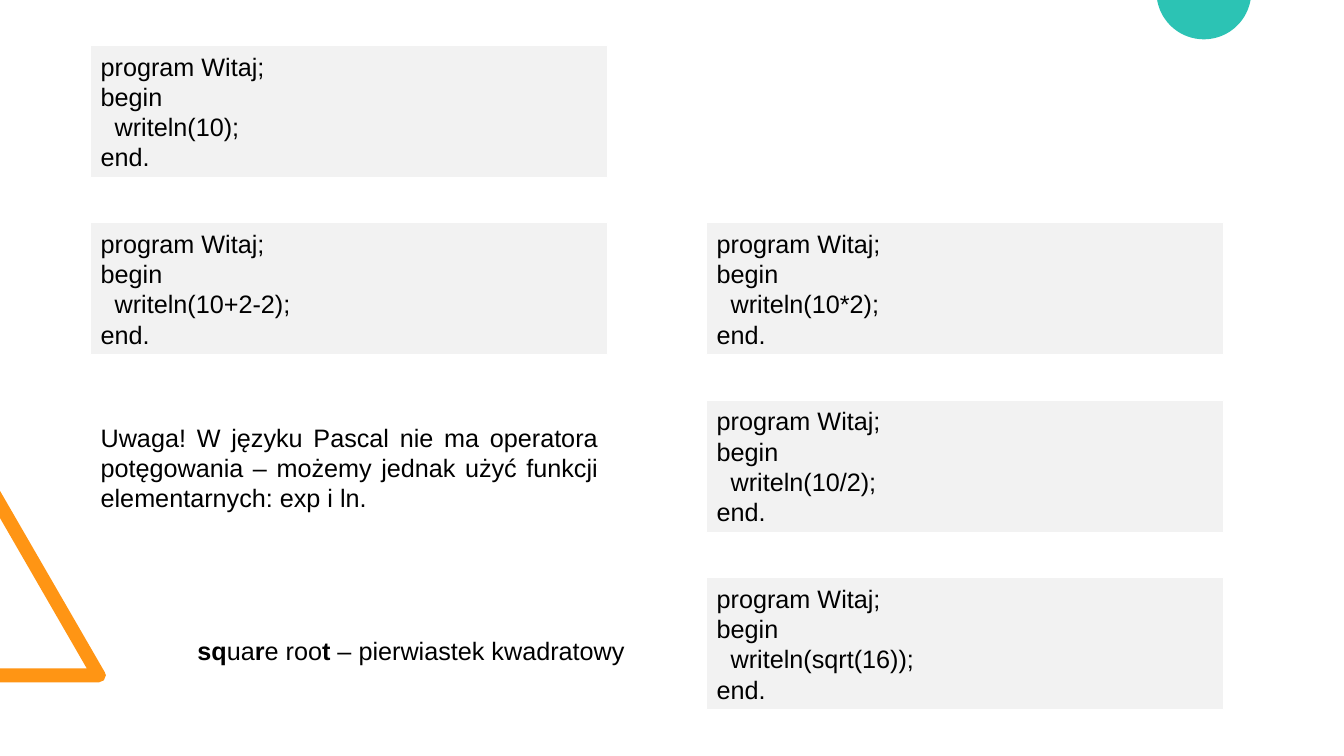
import math

import pptx
import pptx.dml.color
import pptx.enum.shapes
import pptx.enum.text
import pptx.util

Inches = pptx.util.Inches
COLORS = {
    "orange": "FF9514",
    "teal": "2CC3B4",
    "panel": "F2F2F2",
    "white": "FFFFFF",
    "black": "000000",
}


def color(name):
    return pptx.dml.color.RGBColor.from_string(COLORS[name])


def style_text(text_frame):
    text_frame.word_wrap = True
    text_frame.auto_size = pptx.enum.text.MSO_AUTO_SIZE.SHAPE_TO_FIT_TEXT
    for paragraph in text_frame.paragraphs:
        for run in paragraph.runs:
            run.font.name = "Arial"
            run.font.size = pptx.util.Pt(18)
            run.font.color.rgb = color("black")


presentation = pptx.Presentation()
presentation.slide_width = Inches(13.33)
presentation.slide_height = Inches(7.5)
slide = presentation.slides.add_slide(presentation.slide_layouts[6])

# Decorations cut off by the slide edges: a triangle and a circle
triangle = [(0, 6.77), (0, 6.63), (0.86, 6.63), (0, 5.14), (0, 4.87),
            (1.04, 6.67), (1.05, 6.7), (1.03, 6.75), (0.98, 6.77)]
center_x, center_y, radius = 11.94, -0.08, 0.47
edge_angle = math.asin(-center_y / radius)
steps = 48
circle = []
for step in range(steps + 1):
    angle = edge_angle + (math.pi - 2 * edge_angle) * step / steps
    circle.append((center_x + radius * math.cos(angle),
                   center_y + radius * math.sin(angle)))

for outline, fill in [(triangle, "orange"), (circle, "teal")]:
    points = [(Inches(x), Inches(y)) for x, y in outline]
    builder = slide.shapes.build_freeform(*points[0])
    builder.add_line_segments(points[1:], close=True)
    shape = builder.convert_to_shape()
    shape.shadow.inherit = False
    shape.fill.solid()
    shape.fill.fore_color.rgb = color(fill)
    shape.line.fill.background()

# Code panels on a grid of two columns and four rows
panels = [
    (0, 0, "10"),
    (0, 1, "10+2-2"),
    (1, 1, "10*2"),
    (1, 2, "10/2"),
    (1, 3, "sqrt(16)"),
]
for column, row, expression in panels:
    panel = slide.shapes.add_shape(
        pptx.enum.shapes.MSO_SHAPE.RECTANGLE,
        Inches(0.9 + 6.11 * column), Inches(0.45 + 1.76 * row),
        Inches(5.13), Inches(1.31))
    panel.shadow.inherit = False
    panel.fill.solid()
    panel.fill.fore_color.rgb = color("panel")
    panel.line.color.rgb = color("white")
    panel.line.width = pptx.util.Pt(0.75)
    panel.text_frame.text = f"program Witaj;\nbegin\n  writeln({expression});\nend."
    for paragraph in panel.text_frame.paragraphs:
        paragraph.alignment = pptx.enum.text.PP_ALIGN.LEFT
    style_text(panel.text_frame)

# Explanation of the name sqrt, with its letters in bold
square_root = slide.shapes.add_textbox(
    Inches(1.86), Inches(6.25), Inches(4.59), Inches(0.4))
paragraph = square_root.text_frame.paragraphs[0]
for index, part in enumerate(
        ["sq", "ua", "r", "e roo", "t", " – pierwiastek kwadratowy"]):
    run = paragraph.add_run()
    run.text = part
    run.font.bold = index % 2 == 0
style_text(square_root.text_frame)

# Note on exponentiation
note = slide.shapes.add_textbox(
    Inches(0.9), Inches(4.14), Inches(5.13), Inches(1.01))
note.text_frame.text = (
    "Uwaga! W języku Pascal nie ma operatora potęgowania – możemy jednak "
    "użyć funkcji elementarnych: exp i ln.")
note.text_frame.paragraphs[0].alignment = pptx.enum.text.PP_ALIGN.JUSTIFY
style_text(note.text_frame)

presentation.save("out.pptx")
